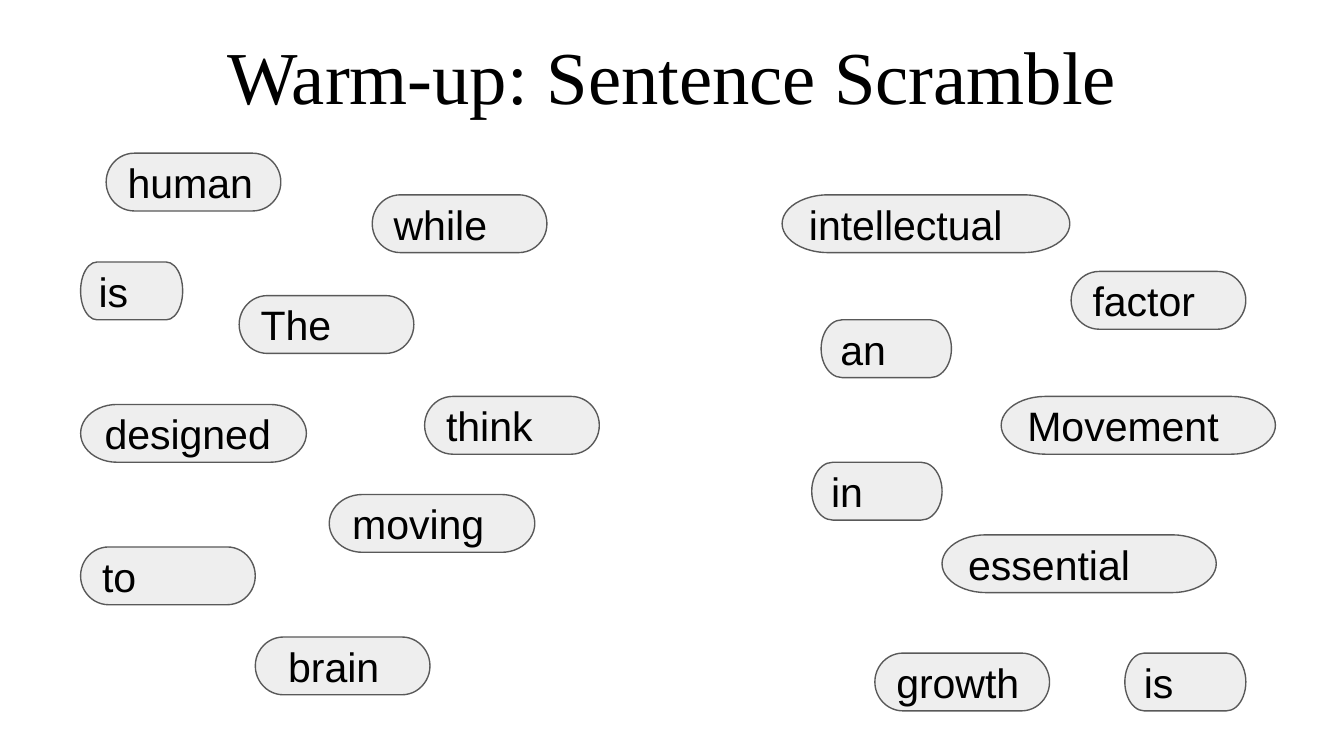
from dataclasses import dataclass

from pptx import Presentation
from pptx import util as u
from pptx.dml.color import RGBColor
from pptx.enum import shapes, text


@dataclass(frozen=True)
class Theme:
    ink: RGBColor = RGBColor(0x00, 0x00, 0x00)
    card_fill: RGBColor = RGBColor(0xEE, 0xEE, 0xEE)
    card_line: RGBColor = RGBColor(0x59, 0x59, 0x59)
    title_font: str = "Times New Roman"
    word_font: str = "Arial"
    title_size: u.Pt = u.Pt(40)
    word_size: u.Pt = u.Pt(22)
    line_width: u.Pt = u.Pt(0.75)


theme = Theme()
CARD_HEIGHT = 0.43
MARGIN = u.Inches(0.1)


def style_text(frame, anchor, font_name, size, alignment):
    frame.margin_left = frame.margin_right = MARGIN
    frame.margin_top = frame.margin_bottom = MARGIN
    frame.vertical_anchor = anchor
    paragraph = frame.paragraphs[0]
    paragraph.alignment = alignment
    paragraph.font.name = font_name
    paragraph.font.size = size
    paragraph.font.color.rgb = theme.ink


# Widescreen slide, 16:9
prs = Presentation()
prs.slide_width = u.Inches(10)
prs.slide_height = u.Inches(10 * 9 / 16)
slide = prs.slides.add_slide(prs.slide_layouts[5])

# Word cards: word, left, top, width in inches
word_cards = [
    # First sentence, left half
    ("moving", 2.45, 3.68, 1.53),
    ("human", 0.79, 1.14, 1.3),
    ("while", 2.77, 1.45, 1.3),
    ("to", 0.6, 4.07, 1.3),
    ("think", 3.16, 2.95, 1.3),
    ("The", 1.78, 2.2, 1.3),
    (" brain", 1.9, 4.74, 1.3),
    ("is", 0.6, 1.95, 0.76),
    ("designed", 0.6, 3.01, 1.68),
    # Second sentence, right half
    ("in", 6.04, 3.44, 0.97),
    ("is", 8.37, 4.86, 0.9),
    ("essential", 7.01, 3.98, 2.04),
    ("growth", 6.51, 4.86, 1.3),
    ("Movement", 7.45, 2.95, 2.04),
    ("intellectual", 5.82, 1.45, 2.14),
    ("factor", 7.97, 2.02, 1.3),
    ("an", 6.11, 2.38, 0.97),
]
for word, left, top, width in word_cards:
    card = slide.shapes.add_shape(
        shapes.MSO_SHAPE.FLOWCHART_TERMINATOR,
        u.Inches(left), u.Inches(top), u.Inches(width), u.Inches(CARD_HEIGHT))
    card.shadow.inherit = False
    card.fill.solid()
    card.fill.fore_color.rgb = theme.card_fill
    card.line.color.rgb = theme.card_line
    card.line.width = theme.line_width
    card.text_frame.text = word
    style_text(card.text_frame, text.MSO_ANCHOR.MIDDLE, theme.word_font,
               theme.word_size, text.PP_ALIGN.LEFT)

# Title
title = slide.shapes.title
title.left, title.top = u.Inches(0.34), u.Inches(0.12)
title.width, title.height = u.Inches(9.32), u.Inches(0.84)
heading = title.text_frame
heading.text = "Warm-up: Sentence Scramble"
heading.auto_size = text.MSO_AUTO_SIZE.NONE
style_text(heading, text.MSO_ANCHOR.TOP, theme.title_font,
           theme.title_size, text.PP_ALIGN.CENTER)

prs.save("out.pptx")
